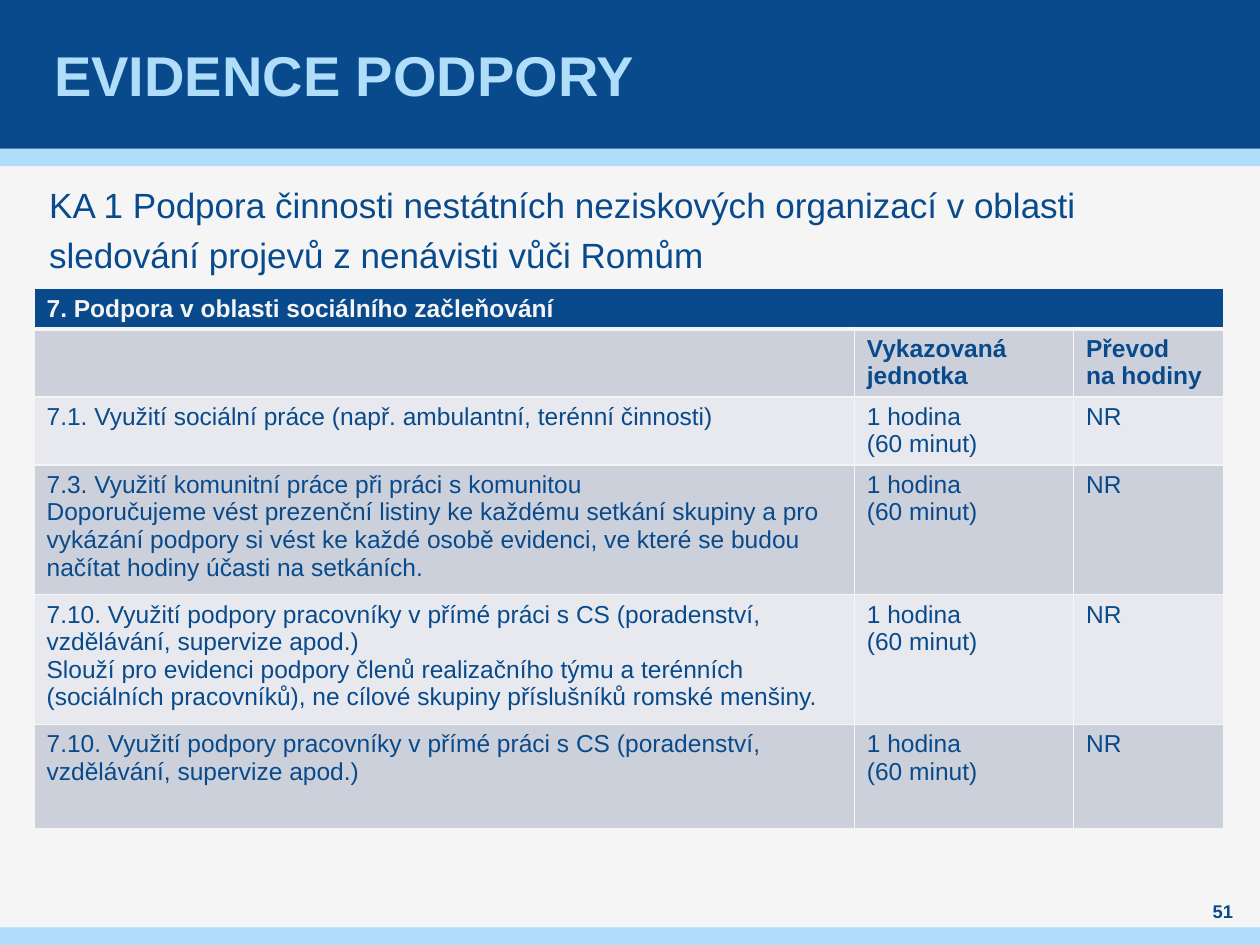
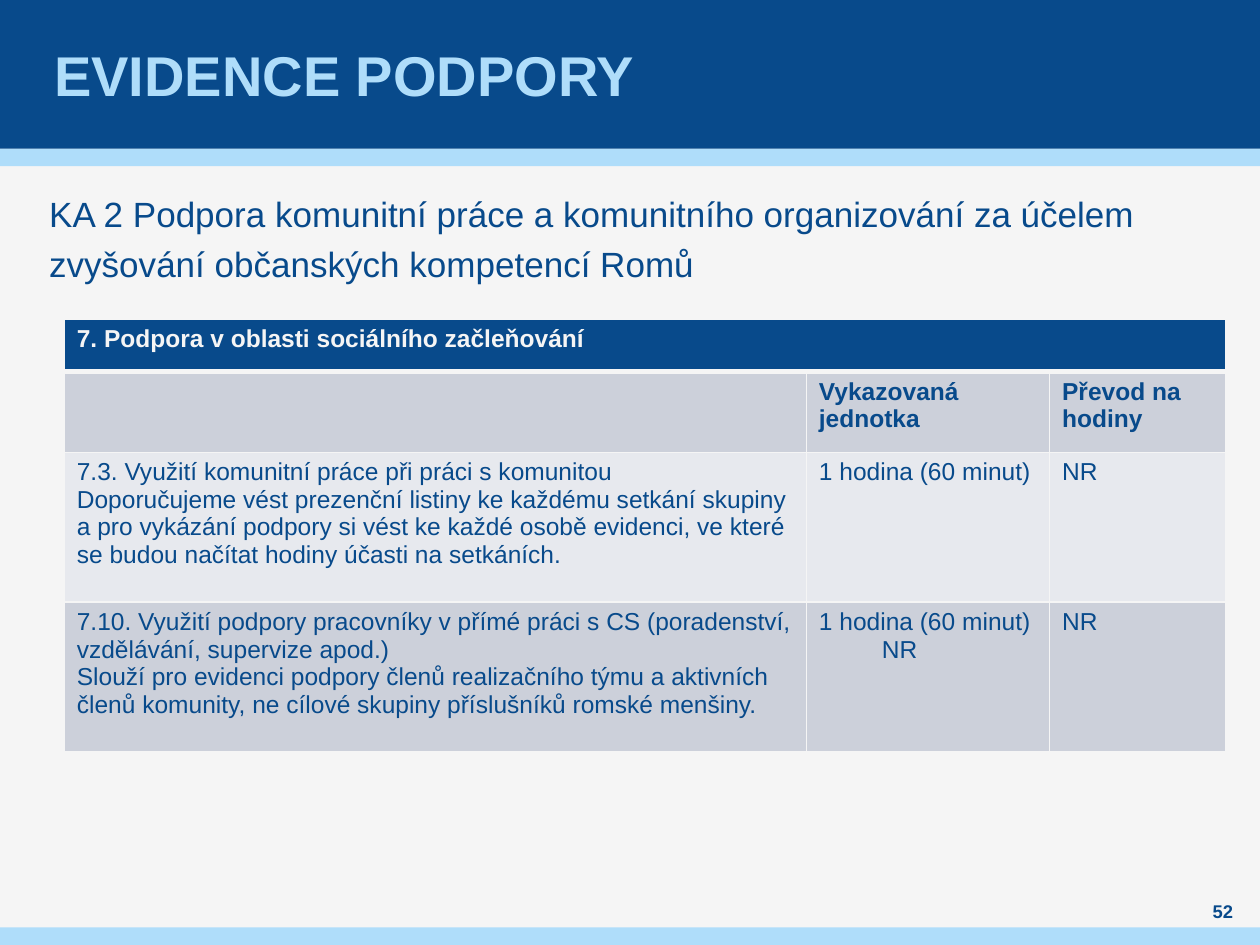
import dataclasses

import lxml.etree
import pptx
import pptx.dml.color
import pptx.enum.shapes
import pptx.enum.text
import pptx.oxml.ns
import pptx.util

Inches = pptx.util.Inches
Pt = pptx.util.Pt
ANCHOR = pptx.enum.text.MSO_ANCHOR
ALIGN = pptx.enum.text.PP_ALIGN


@dataclasses.dataclass(frozen=True)
class Theme:
    font: str = "Arial"
    navy: str = "084A8B"
    sky: str = "AFDDFA"
    paper: str = "F5F5F5"
    dark_row: str = "CCD0DA"
    pale_row: str = "E7E9EE"
    title: float = 32
    lead: float = 20
    cell: float = 14
    number: float = 10.5


THEME = Theme()
BANDS = [(1.18, 0.14, THEME.sky), (0, 1.18, THEME.navy), (7.36, 0.14, THEME.sky)]
BODY_END = 6.69
HEAD = "7. Podpora v oblasti sociálního začleňování"
UNIT = "Vykazovaná jednotka"
HOUR = "1 hodina \v(60 minut)"
HOUR_LINE = "1 hodina (60 minut)"
GROUP = (
    "7.3. Využití komunitní práce při práci s komunitou\n"
    "Doporučujeme vést prezenční listiny ke každému setkání skupiny a pro "
    "vykázání podpory si vést ke každé osobě evidenci, ve které se budou "
    "načítat hodiny účasti na setkáních."
)
STAFF = (
    "7.10. Využití podpory pracovníky v přímé práci s CS "
    "(poradenství, vzdělávání, supervize apod.)"
)
TEAM = "Slouží pro evidenci podpory členů realizačního týmu a "
TARGET = ", ne cílové skupiny příslušníků romské menšiny."

PAGES = [
    {
        "number": "51",
        "lead": "KA 1 Podpora činnosti nestátních neziskových organizací v oblasti "
                "sledování projevů z nenávisti vůči Romům",
        "lead_top": 1.39,
        "place": (0.27, 2.29),
        "widths": [6.51, 1.74, 1.19],
        "heights": [0.32, 0.54, 0.54, 1.03, 1.03, 0.83],
        "rows": [
            [HEAD, "", ""],
            ["", UNIT, "Převod \vna hodiny"],
            ["7.1. Využití sociální práce (např. ambulantní, terénní činnosti)", HOUR, "NR"],
            [GROUP, HOUR, "NR"],
            [f"{STAFF}\n{TEAM}terénních (sociálních pracovníků){TARGET}", HOUR, "NR"],
            [STAFF, HOUR, "NR"],
        ],
    },
    {
        "number": "52",
        "lead": "KA 2 Podpora komunitní práce a komunitního organizování za účelem "
                "zvyšování občanských kompetencí Romů",
        "lead_top": 1.46,
        "place": (0.51, 2.53),
        "widths": [5.89, 1.93, 1.4],
        "heights": [0.42, 0.64, 1.19, 1.19],
        "rows": [
            [HEAD, "", ""],
            ["", UNIT, "Převod na hodiny"],
            [GROUP, HOUR_LINE, "NR"],
            [f"{STAFF}\n{TEAM}aktivních členů komunity{TARGET}", HOUR_LINE + " \tNR", "NR"],
        ],
    },
]


def apply(target, values):
    for name, value in values.items():
        setattr(target, name, value)


def tint(fill, color):
    fill.solid()
    fill.fore_color.rgb = pptx.dml.color.RGBColor.from_string(color)


def write(frame, text, size, color, bold=False, **para):
    """Fill a text frame with one style; para holds paragraph settings."""
    frame.text = text
    for line in frame.paragraphs:
        apply(line, para)
        for run in line.runs:
            apply(run.font, {"name": THEME.font, "size": Pt(size), "bold": bold})
            run.font.color.rgb = pptx.dml.color.RGBColor.from_string(color)


def format_box(frame, anchor, side=0):
    apply(frame, {
        "word_wrap": True,
        "auto_size": pptx.enum.text.MSO_AUTO_SIZE.NONE,
        "vertical_anchor": anchor,
        "margin_left": Inches(side),
        "margin_right": Inches(side),
        "margin_top": 0,
        "margin_bottom": 0,
    })


def paint_master(deck, slide):
    """Draw the bands on a slide, then move them to the master for all slides."""
    master = deck.slide_master
    tint(master.background.fill, THEME.paper)
    for top, height, color in BANDS:
        band = slide.shapes.add_shape(
            pptx.enum.shapes.MSO_SHAPE.RECTANGLE,
            0, Inches(top), deck.slide_width, Inches(height))
        band.shadow.inherit = False
        tint(band.fill, color)
        band.line.fill.background()
        master.shapes.element.append(band.element)


def add_title(slide, text):
    title = slide.shapes.title
    apply(title, {"left": Inches(0.39), "top": 0,
                  "width": Inches(9.21), "height": Inches(1.18)})
    format_box(title.text_frame, ANCHOR.MIDDLE, 0.04)
    write(title.text_frame, text, THEME.title, THEME.sky, True, alignment=ALIGN.LEFT)


def add_lead(slide, text, top):
    box = slide.shapes.add_textbox(
        Inches(0.39), Inches(top), Inches(9.02), Inches(BODY_END - top))
    format_box(box.text_frame, ANCHOR.TOP)
    write(box.text_frame, text, THEME.lead, THEME.navy,
          line_spacing=Pt(28.8), space_before=Pt(6), space_after=Pt(6))


def add_number(slide, text):
    box = slide.shapes.add_textbox(
        Inches(9.45), Inches(7.13), Inches(0.51), Inches(0.2))
    format_box(box.text_frame, ANCHOR.MIDDLE)
    write(box.text_frame, text, THEME.number, THEME.navy, True, alignment=ALIGN.CENTER)


def edge_cell(cell, row):
    """Add cell borders; the line under the heading row is thicker."""
    props = cell._tc.get_or_add_tcPr()
    thick = {(0, "B"), (1, "T")}
    for side in "LRTB":
        width = Pt(3 if (row, side) in thick else 1)
        line = lxml.etree.SubElement(
            props, pptx.oxml.ns.qn(f"a:ln{side}"), w=str(width))
        fill = lxml.etree.SubElement(line, pptx.oxml.ns.qn("a:solidFill"))
        lxml.etree.SubElement(fill, pptx.oxml.ns.qn("a:srgbClr"), val=THEME.paper)


def add_grid(slide, rows, place, widths, heights):
    left, top = place
    table = slide.shapes.add_table(
        len(rows), len(widths), Inches(left), Inches(top),
        Inches(sum(widths)), Inches(sum(heights))).table
    apply(table, {"first_row": False, "horz_banding": False})
    for column, width in zip(table.columns, widths):
        column.width = Inches(width)
    for index, (row, height) in enumerate(zip(table.rows, heights)):
        row.height = Inches(height)
        shade = THEME.dark_row if index % 2 else THEME.pale_row
        back, ink = (shade, THEME.navy) if index else (THEME.navy, THEME.paper)
        for cell, text in zip(row.cells, rows[index]):
            edge_cell(cell, index)
            tint(cell.fill, back)
            write(cell.text_frame, text, THEME.cell, ink, index < 2)
    table.cell(0, 0).merge(table.cell(0, len(widths) - 1))


def main():
    deck = pptx.Presentation()
    apply(deck, {"slide_width": Inches(10), "slide_height": Inches(7.5)})
    layout = deck.slide_layouts.get_by_name("Title Only")
    for page in PAGES:
        slide = deck.slides.add_slide(layout)
        add_title(slide, "EVIDENCE PODPORY")
        add_lead(slide, page["lead"], page["lead_top"])
        add_number(slide, page["number"])
        add_grid(slide, page["rows"], page["place"], page["widths"], page["heights"])
    paint_master(deck, deck.slides[0])
    deck.save("out.pptx")


if __name__ == "__main__":
    main()
